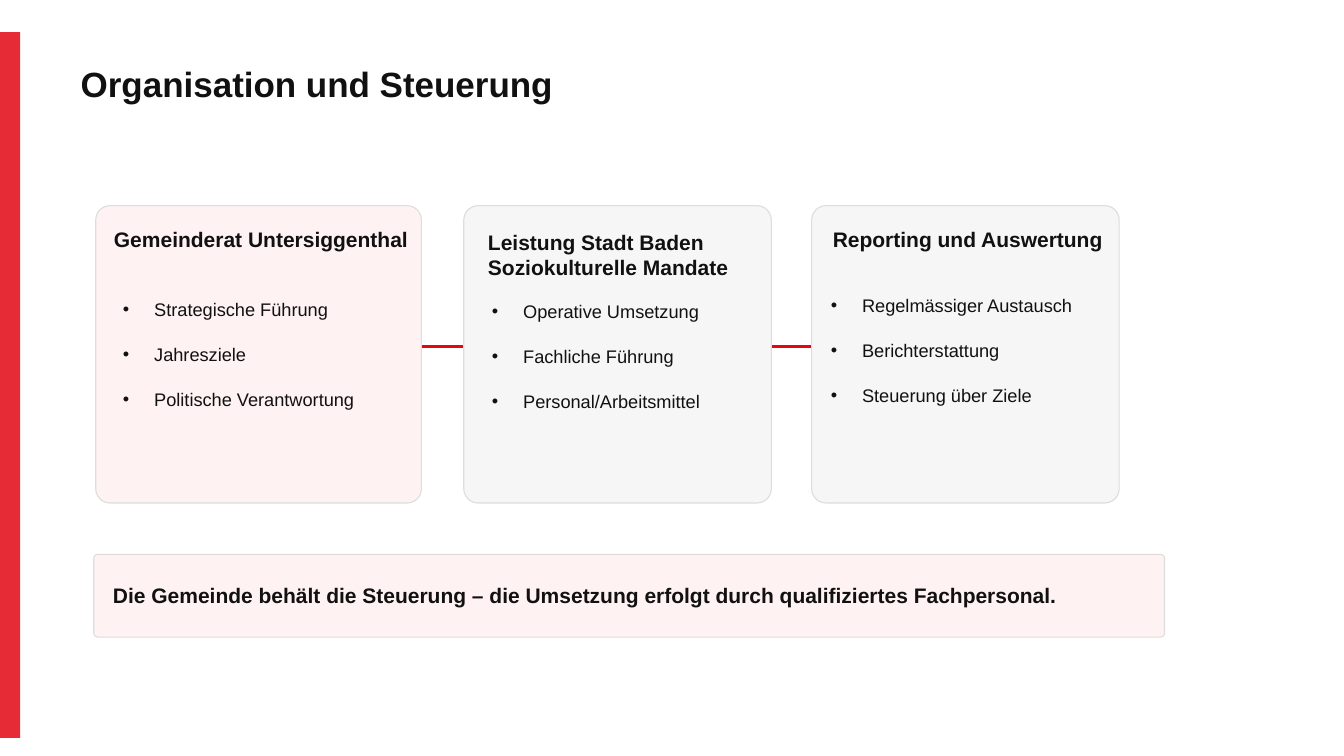
from dataclasses import dataclass

from lxml import etree
from pptx import Presentation
from pptx import util as u
from pptx.dml.color import RGBColor
from pptx.enum import shapes, text
from pptx.oxml import ns

EMU_PER_PX = 9144


@dataclass(frozen=True)
class Theme:
    font: str = "Arial"
    ink: str = "111111"
    red: str = "E30613"
    rose: str = "FFF2F2"
    grey: str = "F6F6F6"
    border: str = "DDDDDD"
    title_size: int = 25
    heading_size: int = 15
    bullet_size: int = 13
    bullet_gap: float = 16.5


@dataclass(frozen=True)
class Box:
    left: int
    top: int
    width: int
    height: int


@dataclass(frozen=True)
class Card:
    box: Box
    fill: str
    heading_box: Box
    heading: tuple[str, ...]
    bullets_box: Box
    bullets: tuple[str, ...]


THEME = Theme()
CARD_TOP, CARD_HEIGHT = 204, 295
CARDS = (
    Card(Box(95, CARD_TOP, 323, CARD_HEIGHT), THEME.rose,
         Box(113, 224, 305, 27), ("Gemeinderat Untersiggenthal",),
         Box(122, 299, 253, 105),
         ("Strategische Führung", "Jahresziele", "Politische Verantwortung")),
    Card(Box(460, CARD_TOP, 305, CARD_HEIGHT), THEME.grey,
         Box(484, 239, 254, 27), ("Leistung Stadt Baden", "Soziokulturelle Mandate"),
         Box(488, 301, 254, 105),
         ("Operative Umsetzung", "Fachliche Führung", "Personal/Arbeitsmittel")),
    Card(Box(805, CARD_TOP, 305, CARD_HEIGHT), THEME.grey,
         Box(826, 224, 274, 27), ("Reporting und Auswertung",),
         Box(824, 295, 249, 105),
         ("Regelmässiger Austausch", "Berichterstattung", "Steuerung über Ziele")),
)


def px(n: int) -> u.Emu:
    return u.Emu(n * EMU_PER_PX)


def frame(box: Box) -> tuple[u.Emu, ...]:
    return px(box.left), px(box.top), px(box.width), px(box.height)


def rgb(colour: str) -> RGBColor:
    return RGBColor.from_string(colour)


def add_bullet(p) -> None:
    pPr = p._p.get_or_add_pPr()
    pPr.set("marL", str(px(31)))
    pPr.set("indent", str(px(-31)))
    etree.SubElement(pPr, ns.qn("a:buFont")).set("typeface", THEME.font)
    etree.SubElement(pPr, ns.qn("a:buChar")).set("char", "•")


def write(tf, lines: tuple[str, ...], size: int, bold: bool = True,
          bullets: bool = False) -> None:
    tf.word_wrap = True
    tf.auto_size = text.MSO_AUTO_SIZE.NONE
    tf.vertical_anchor = text.MSO_ANCHOR.MIDDLE
    tf.margin_left = tf.margin_right = tf.margin_top = tf.margin_bottom = 0
    for i, line in enumerate(lines):
        p = tf.add_paragraph() if i else tf.paragraphs[0]
        p.alignment = text.PP_ALIGN.LEFT
        if bullets:
            add_bullet(p)
            if i:
                p.space_before = u.Pt(THEME.bullet_gap)
        r = p.add_run()
        r.text = line
        r.font.name = THEME.font
        r.font.size = u.Pt(size)
        r.font.bold = bold
        r.font.color.rgb = rgb(THEME.ink)


def add_text(s, box: Box, lines: tuple[str, ...], size: int, bold: bool = True,
             bullets: bool = False) -> None:
    write(s.shapes.add_textbox(*frame(box)).text_frame, lines, size, bold, bullets)


def add_panel(s, box: Box, fill: str) -> None:
    sp = s.shapes.add_shape(shapes.MSO_SHAPE.ROUNDED_RECTANGLE, *frame(box))
    sp.adjustments[0] = 0.048
    sp.shadow.inherit = False
    sp.fill.solid()
    sp.fill.fore_color.rgb = rgb(fill)
    sp.line.color.rgb = rgb(THEME.border)
    sp.line.width = u.Pt(0.8)


def add_side_bar(s, box: Box) -> None:
    sp = s.shapes.add_shape(shapes.MSO_SHAPE.RECTANGLE, *frame(box))
    sp.shadow.inherit = False
    sp.fill.solid()
    sp.fill.fore_color.rgb = rgb(THEME.red)
    sp.line.fill.background()
    colour = sp._element.spPr.find(ns.qn("a:solidFill"))[0]
    etree.SubElement(colour, ns.qn("a:alpha")).set("val", "85000")


def add_link(s, start: int, end: int, y: int) -> None:
    line = s.shapes.add_connector(shapes.MSO_CONNECTOR.STRAIGHT,
                                  px(start), px(y), px(end), px(y))
    line.line.color.rgb = rgb(THEME.red)
    line.line.width = u.Pt(2)
    etree.SubElement(line._element.spPr, ns.qn("a:effectLst"))


def add_card(s, card: Card) -> None:
    add_panel(s, card.box, card.fill)
    add_text(s, card.heading_box, card.heading, THEME.heading_size)
    add_text(s, card.bullets_box, card.bullets, THEME.bullet_size,
             bold=False, bullets=True)


def main() -> None:
    prs = Presentation()
    prs.slide_width, prs.slide_height = px(1333), px(750)
    s = prs.slides.add_slide(prs.slide_layouts[5])

    title = s.shapes.title
    title.left, title.top, title.width, title.height = frame(Box(80, 60, 1020, 45))
    write(title.text_frame, ("Organisation und Steuerung",), THEME.title_size)

    add_side_bar(s, Box(0, 32, 20, 700))
    add_link(s, 271, 831, 344)
    for card in CARDS:
        add_card(s, card)

    add_panel(s, Box(93, 550, 1062, 82), THEME.rose)
    add_text(s, Box(112, 565, 1084, 50),
             ("Die Gemeinde behält die Steuerung – die Umsetzung erfolgt "
              "durch qualifiziertes Fachpersonal.",), THEME.heading_size)

    prs.save("out.pptx")


if __name__ == "__main__":
    main()
